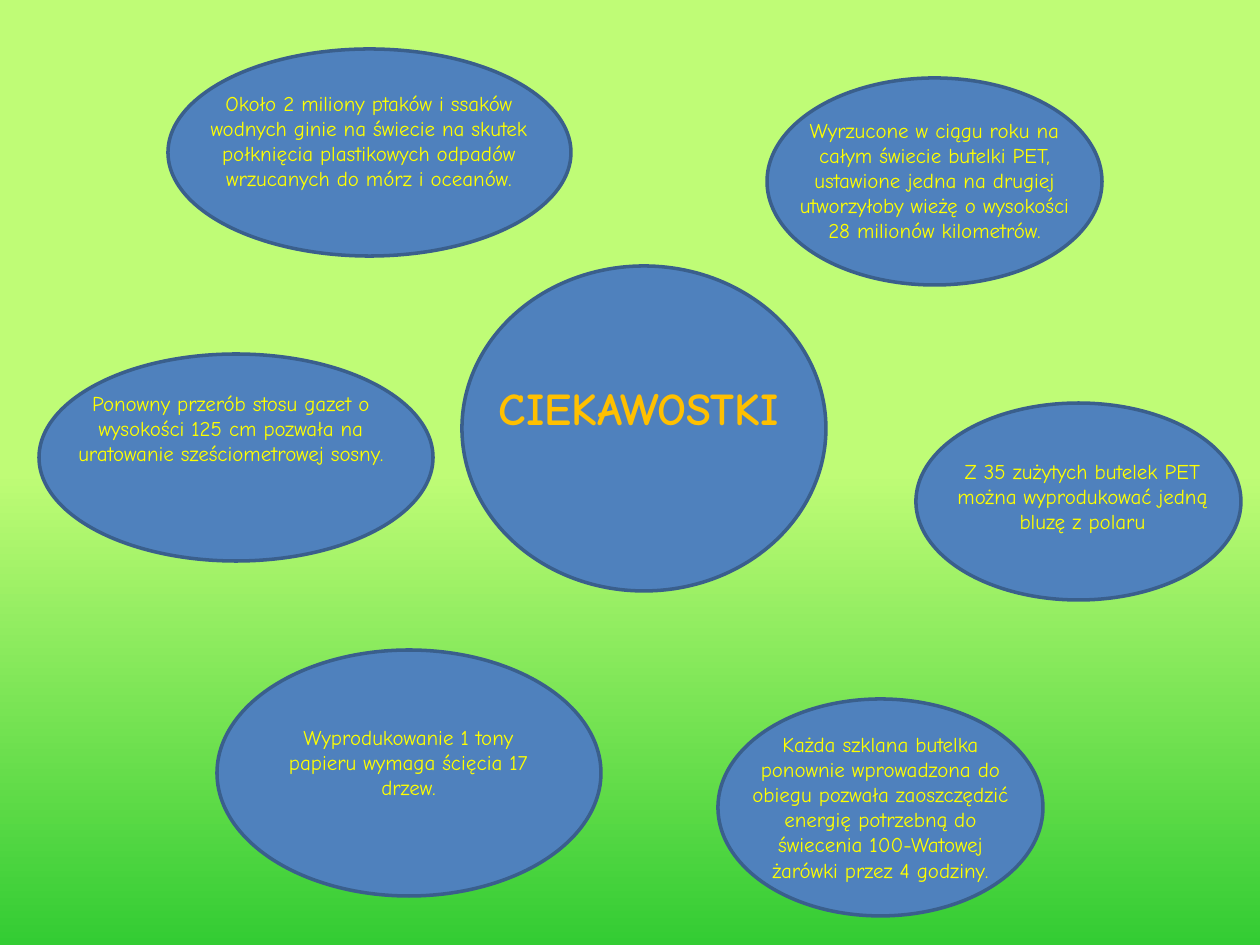
from pptx import Presentation
from pptx.dml.color import RGBColor
from pptx.enum.shapes import MSO_SHAPE
from pptx.enum.text import MSO_AUTO_SIZE, PP_ALIGN
from pptx.util import Pt

PX = 914400 / 126
LIME = RGBColor(0xBF, 0xFC, 0x76)
GREEN = RGBColor(0x33, 0xCC, 0x33)
BLUE = RGBColor(0x4F, 0x81, 0xBD)
DARK_BLUE = RGBColor(0x3A, 0x5F, 0x8C)
GOLD = RGBColor(0xFF, 0xC0, 0x00)
YELLOW = RGBColor(0xFF, 0xFF, 0x00)
FONT = "Comic Neue"


def emu(*lengths):
    return [round(length * PX) for length in lengths]


def add_bubble(oval_box, words_box, words, size, color, bold):
    oval = slide.shapes.add_shape(MSO_SHAPE.OVAL, *emu(*oval_box))
    oval.shadow.inherit = False
    oval.fill.solid()
    oval.fill.fore_color.rgb = BLUE
    oval.line.color.rgb = DARK_BLUE
    oval.line.width = Pt(2)

    frame = slide.shapes.add_textbox(*emu(*words_box)).text_frame
    frame.word_wrap = True
    frame.auto_size = MSO_AUTO_SIZE.SHAPE_TO_FIT_TEXT
    paragraph = frame.paragraphs[0]
    paragraph.text = words
    paragraph.alignment = PP_ALIGN.CENTER
    paragraph.font.name = FONT
    paragraph.font.size = Pt(size)
    paragraph.font.bold = bold
    paragraph.font.color.rgb = color


presentation = Presentation()
presentation.slide_width, presentation.slide_height = emu(1260, 945)
slide = presentation.slides.add_slide(presentation.slide_layouts[6])

backdrop = slide.background.fill
backdrop.gradient()
backdrop.gradient_angle = 270
for stop, position, color in zip(backdrop.gradient_stops, (0.5, 1), (LIME, GREEN)):
    stop.position = position
    stop.color.rgb = color

add_bubble((462, 266, 364, 325), (452, 374, 374, 68), "CIEKAWOSTKI", 26, GOLD, True)

facts = [
    ((767, 78, 335, 207), (787, 111, 295, 165),
     "Wyrzucone w ciągu roku na całym świecie butelki PET, ustawione jedna "
     "na drugiej utworzyłoby wieżę o wysokości 28 milionów kilometrów."),
    ((916, 403, 325, 197), (935, 452, 295, 89),
     "Z 35 zużytych butelek PET można wyprodukować jedną bluzę z polaru"),
    ((718, 699, 325, 217), (733, 725, 295, 190),
     "Każda szklana butelka ponownie wprowadzona do obiegu pozwała zaoszczędzić "
     "energię potrzebną do świecenia 100-Watowej żarówki przez 4 godziny."),
    ((168, 49, 403, 207), (197, 84, 344, 140),
     "Około 2 miliony ptaków i ssaków wodnych ginie na świecie na skutek "
     "połknięcia plastikowych odpadów wrzucanych do mórz i oceanów."),
    ((39, 354, 394, 207), (49, 384, 364, 115),
     "Ponowny przerób stosu gazet o wysokości 125 cm pozwała na uratowanie "
     "sześciometrowej sosny."),
    ((217, 650, 384, 246), (256, 718, 305, 89),
     "Wyprodukowanie 1 tony papieru wymaga ścięcia 17 drzew."),
]
for oval_box, words_box, fact in facts:
    add_bubble(oval_box, words_box, fact, 12, YELLOW, False)

presentation.save("out.pptx")
